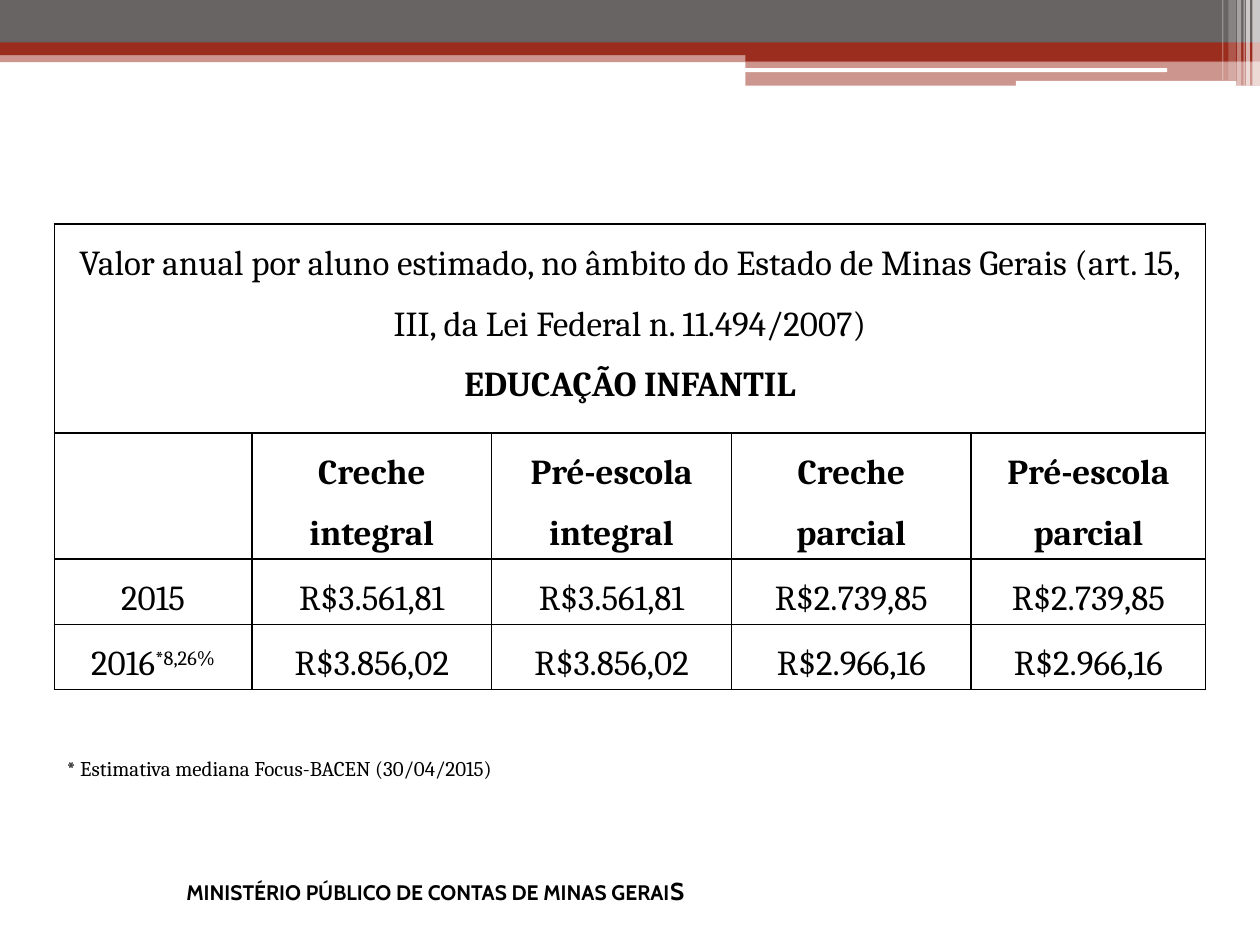
"""Build the slide on the estimated yearly value per pupil in early education."""
from lxml.etree import SubElement
from pptx import Presentation
from pptx.dml.color import RGBColor
from pptx.enum.shapes import MSO_SHAPE as Shape
from pptx.enum.text import PP_ALIGN as Align
from pptx.oxml import parse_xml
from pptx.oxml.ns import nsdecls, qn
from pptx.util import Pt

GRAY, RED, WHITE, BLACK = "696464", "9B2D1F", "FFFFFF", "000000"
COLUMN_WIDTHS = [113, 137, 137, 137, 134]
ROW_HEIGHTS = [119.5, 72, 37.2, 37.2]
HEADING = "Valor anual por aluno estimado, no âmbito do Estado de Minas Gerais (art. 15, III, da Lei Federal n. 11.494/2007)"
COLUMN_NAMES = ["Creche integral", "Pré-escola integral", "Creche parcial", "Pré-escola parcial"]
YEARS = [
    ["2015", "R$3.561,81", "R$3.561,81", "R$2.739,85", "R$2.739,85"],
    ["2016", "R$3.856,02", "R$3.856,02", "R$2.966,16", "R$2.966,16"],
]


def set_color(color_format, value):
    """Set a colour from a hex string."""
    color_format.rgb = RGBColor.from_string(value)


def add_bar(slide, left, top, width, height, color, opacity=100, kind=Shape.RECTANGLE):
    """Add a borderless bar with the given opacity in percent."""
    shape = slide.shapes.add_shape(kind, Pt(left), Pt(top), Pt(width), Pt(height))
    shape.shadow.inherit = False
    shape.line.fill.background()
    shape.fill.solid()
    set_color(shape.fill.fore_color, color)
    if opacity < 100:
        color_element = shape.fill._xPr.find(qn("a:solidFill"))[0]
        SubElement(color_element, qn("a:alpha"), val=str(opacity * 1000))


def add_run(paragraph, text, size, font="Cambria", bold=False):
    """Append a black run and return it."""
    run = paragraph.add_run()
    run.text = text
    run.font.size, run.font.name, run.font.bold = Pt(size), font, bold
    set_color(run.font.color, BLACK)
    return run


def add_text_box(slide, left, top, width, height):
    """Add a wrapping text box and return its first paragraph."""
    frame = slide.shapes.add_textbox(Pt(left), Pt(top), Pt(width), Pt(height)).text_frame
    frame.word_wrap = True
    return frame.paragraphs[0]


def format_cell(cell):
    """Give a cell no fill, narrow margins and thin black borders."""
    cell.margin_left = cell.margin_right = Pt(5)
    cell.margin_top = cell.margin_bottom = 0
    cell.fill.background()
    properties = cell._tc.get_or_add_tcPr()
    for index, side in enumerate(("lnL", "lnR", "lnT", "lnB")):
        properties.insert(index, parse_xml(
            f'<a:{side} {nsdecls("a")} w="{Pt(1)}"><a:solidFill>'
            f'<a:srgbClr val="{BLACK}"/></a:solidFill></a:{side}>'))


def write_cell(paragraph, text, bold=False):
    """Write centred, widely spaced text into a cell paragraph."""
    paragraph.alignment = Align.CENTER
    paragraph.line_spacing = 1.5
    add_run(paragraph, text, 20, bold=bold)


def add_banner(slide):
    """Draw the layered bars along the top edge."""
    add_bar(slide, 0, 29, 720, 6.5, RED, 50)
    add_bar(slide, 0, 0, 720, 24.5, GRAY)
    add_bar(slide, 0, 24.3, 720, 7.2, RED)
    add_bar(slide, 426, 28, 294, 7, RED)
    add_bar(slide, 426, 34.7, 294, 14.2, RED, 50)
    add_bar(slide, 425.5, 39, 241.5, 2.2, WHITE, kind=Shape.ROUNDED_RECTANGLE)
    add_bar(slide, 580.5, 46.2, 126, 2.8, WHITE, kind=Shape.ROUNDED_RECTANGLE)
    stripes = [(715.7, 4.3, 49, 65), (712, 2.2, 49, 65), (710.6, 0.7, 49, 60),
               (707, 2.2, 49, 40), (702, 4.3, 46, 20), (698.4, 0.7, 46, 30)]
    for left, width, height, opacity in stripes:
        add_bar(slide, left, 0, width, height, WHITE, opacity)


def add_values_table(slide):
    """Add the table of yearly values per pupil."""
    table = slide.shapes.add_table(
        len(ROW_HEIGHTS), len(COLUMN_WIDTHS), Pt(31), Pt(128),
        Pt(sum(COLUMN_WIDTHS)), Pt(sum(ROW_HEIGHTS))).table
    table.first_row = table.horz_banding = False
    for column, width in zip(table.columns, COLUMN_WIDTHS):
        column.width = Pt(width)
    for row, height in zip(table.rows, ROW_HEIGHTS):
        row.height = Pt(height)
    for cell in table.iter_cells():
        format_cell(cell)

    heading = table.cell(0, 0)
    heading.merge(table.cell(0, len(COLUMN_WIDTHS) - 1))
    write_cell(heading.text_frame.paragraphs[0], HEADING)
    write_cell(heading.text_frame.add_paragraph(), "EDUCAÇÃO INFANTIL", bold=True)
    for column, name in enumerate(COLUMN_NAMES, 1):
        write_cell(table.cell(1, column).text_frame.paragraphs[0], name, bold=True)
    for row, values in enumerate(YEARS, 2):
        for column, value in enumerate(values):
            write_cell(table.cell(row, column).text_frame.paragraphs[0], value)
    note_mark = add_run(table.cell(3, 0).text_frame.paragraphs[0], "*8,26%", 20)
    note_mark.font._element.set("baseline", "30000")


def main():
    """Build and save the presentation."""
    presentation = Presentation()
    presentation.slide_width, presentation.slide_height = Pt(720), Pt(540)
    slide = presentation.slides.add_slide(presentation.slide_layouts[6])
    add_banner(slide)
    footer = add_text_box(slide, 99.4, 496.8, 550, 24.5)
    add_run(footer, "MINISTÉRIO PÚBLICO DE CONTAS DE MINAS GERAI", 12, "Cabin", True)
    add_run(footer, "S", 14, "Cabin", True)
    add_values_table(slide)
    note = add_text_box(slide, 31, 428.4, 658, 21.6)
    add_run(note, "* Estimativa mediana Focus-BACEN (30/04/2015)", 12)
    presentation.save("out.pptx")


if __name__ == "__main__":
    main()
